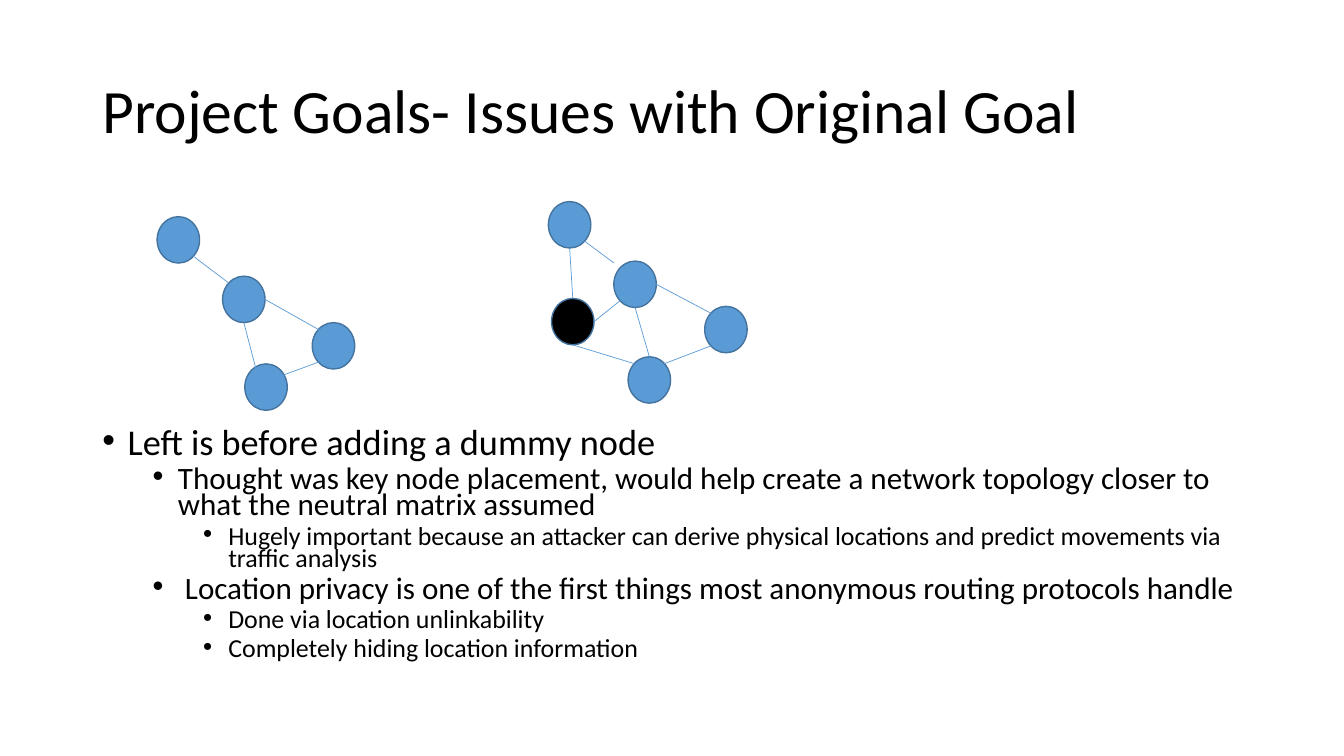
from lxml import etree
from pptx import Presentation
from pptx.dml.color import RGBColor
from pptx.enum import shapes, text
from pptx.oxml.ns import qn
from pptx.util import Cm, Pt

BLACK = RGBColor(0x00, 0x00, 0x00)
NODE_BLUE = RGBColor(0x5B, 0x9B, 0xD5)
NODE_EDGE = RGBColor(0x43, 0x73, 0x9E)
FONT = "Calibri"
NODE_W, NODE_H = 1.07, 1.17

# Where a link may meet a node, as fractions of the node's width and height
SITES = {
    "top": (0.5, 0), "bottom": (0.5, 1), "left": (0, 0.5), "right": (1, 0.5),
    "top left": (0.15, 0.15), "top right": (0.85, 0.15),
    "bottom left": (0.15, 0.85), "bottom right": (0.85, 0.85),
    "upper rim": (0.28, 0.17), "inside": (0.64, 0.33), "corner": (0, 0.04),
}

# Node offsets in cm from the top left of each graph
BEFORE_NODES = {"start": (0, 0), "hub": (1.65, 1.5), "low": (2.21, 3.71), "far": (3.91, 2.67)}
BEFORE_LINKS = [
    ("hub", "bottom", "low", "upper rim"),
    ("hub", "right", "far", "top left"),
    ("low", "inside", "far", "bottom left"),
    ("hub", "top left", "start", "bottom right"),
]
AFTER_NODES = {"start": (0, 0), "hub": (1.65, 1.5), "low": (2.01, 3.91), "far": (3.94, 2.64),
               "dummy": (0.08, 2.44)}
AFTER_LINKS = [
    ("hub", "bottom", "low", "top"),
    ("hub", "right", "far", "top left"),
    ("low", "top right", "far", "bottom left"),
    ("hub", "corner", "start", "bottom right"),
    ("start", "bottom", "dummy", "top"),
    ("dummy", "bottom", "low", "top left"),
    ("dummy", "right", "hub", "bottom left"),
]

BULLETS = [
    (0, "Left is before adding a dummy node"),
    (1, "Thought was key node placement, would help create a network topology closer to "
        "what the neutral matrix assumed"),
    (2, "Hugely important because an attacker can derive physical locations and predict "
        "movements via traffic analysis"),
    (1, " Location privacy is one of the first things most anonymous routing protocols handle"),
    (2, "Done via location unlinkability"),
    (2, "Completely hiding location information"),
]
LEVEL_SIZES = [25.9, 22.2, 18.5]
LEVEL_GAPS = [10, 5, 5]


def add_frame(slide, left, top, width, height):
    frame = slide.shapes.add_textbox(Cm(left), Cm(top), Cm(width), Cm(height)).text_frame
    frame.word_wrap = True
    return frame


def style_paragraph(paragraph, size, spacing):
    paragraph.line_spacing = spacing
    paragraph.font.name = FONT
    paragraph.font.size = Pt(size)
    paragraph.font.color.rgb = BLACK


def add_title(slide, left, top, width, height):
    frame = add_frame(slide, left, top, width, height)
    frame.vertical_anchor = text.MSO_ANCHOR.MIDDLE
    heading = frame.paragraphs[0]
    heading.text = "Project Goals- Issues with Original Goal"
    style_paragraph(heading, 44, 0.9)


def set_bullet(paragraph, level):
    """Hang a round bullet at the indent of the given level."""
    properties = paragraph._p.get_or_add_pPr()
    properties.set("marL", str(Cm(0.635 + 1.27 * level)))
    properties.set("indent", str(-Cm(0.635)))
    font = etree.Element(qn("a:buFont"), typeface="Arial")
    bullet = etree.Element(qn("a:buChar"), char="•")
    defaults = properties.find(qn("a:defRPr"))
    defaults.addprevious(font)
    defaults.addprevious(bullet)


def add_bullets(slide, left, top, width, height):
    frame = add_frame(slide, left, top, width, height)
    for index, (level, wording) in enumerate(BULLETS):
        point = frame.add_paragraph() if index else frame.paragraphs[0]
        point.text = wording
        point.level = level
        point.space_before = Pt(LEVEL_GAPS[level])
        style_paragraph(point, LEVEL_SIZES[level], 0.7)
        set_bullet(point, level)


def add_graph(slide, left, top, nodes, links):
    """Draw the nodes, then the links between their sites."""
    for name, (dx, dy) in nodes.items():
        node = slide.shapes.add_shape(shapes.MSO_SHAPE.OVAL, Cm(left + dx), Cm(top + dy),
                                      Cm(NODE_W), Cm(NODE_H))
        node.shadow.inherit = False
        node.fill.solid()
        node.fill.fore_color.rgb = BLACK if name == "dummy" else NODE_BLUE
        node.line.color.rgb = NODE_EDGE
        node.line.width = Pt(1)

    def site_position(name, site):
        (dx, dy), (across, down) = nodes[name], SITES[site]
        return Cm(left + dx + across * NODE_W), Cm(top + dy + down * NODE_H)

    for source, source_site, target, target_site in links:
        link = slide.shapes.add_connector(shapes.MSO_CONNECTOR.STRAIGHT,
                                          *site_position(source, source_site),
                                          *site_position(target, target_site))
        link.line.color.rgb = NODE_BLUE
        link.line.width = Pt(0.5)
        etree.SubElement(link._element.spPr, qn("a:effectLst"))


def main():
    deck = Presentation()
    deck.slide_width, deck.slide_height = Cm(33.87), Cm(19.05)
    slide = deck.slides.add_slide(deck.slide_layouts[6])
    add_title(slide, 2.33, 1.01, 29.21, 3.68)
    add_bullets(slide, 2.33, 10.74, 29.21, 6.43)
    add_graph(slide, 3.96, 5.46, BEFORE_NODES, BEFORE_LINKS)
    add_graph(slide, 13.82, 5.08, AFTER_NODES, AFTER_LINKS)
    deck.save("out.pptx")


if __name__ == "__main__":
    main()
